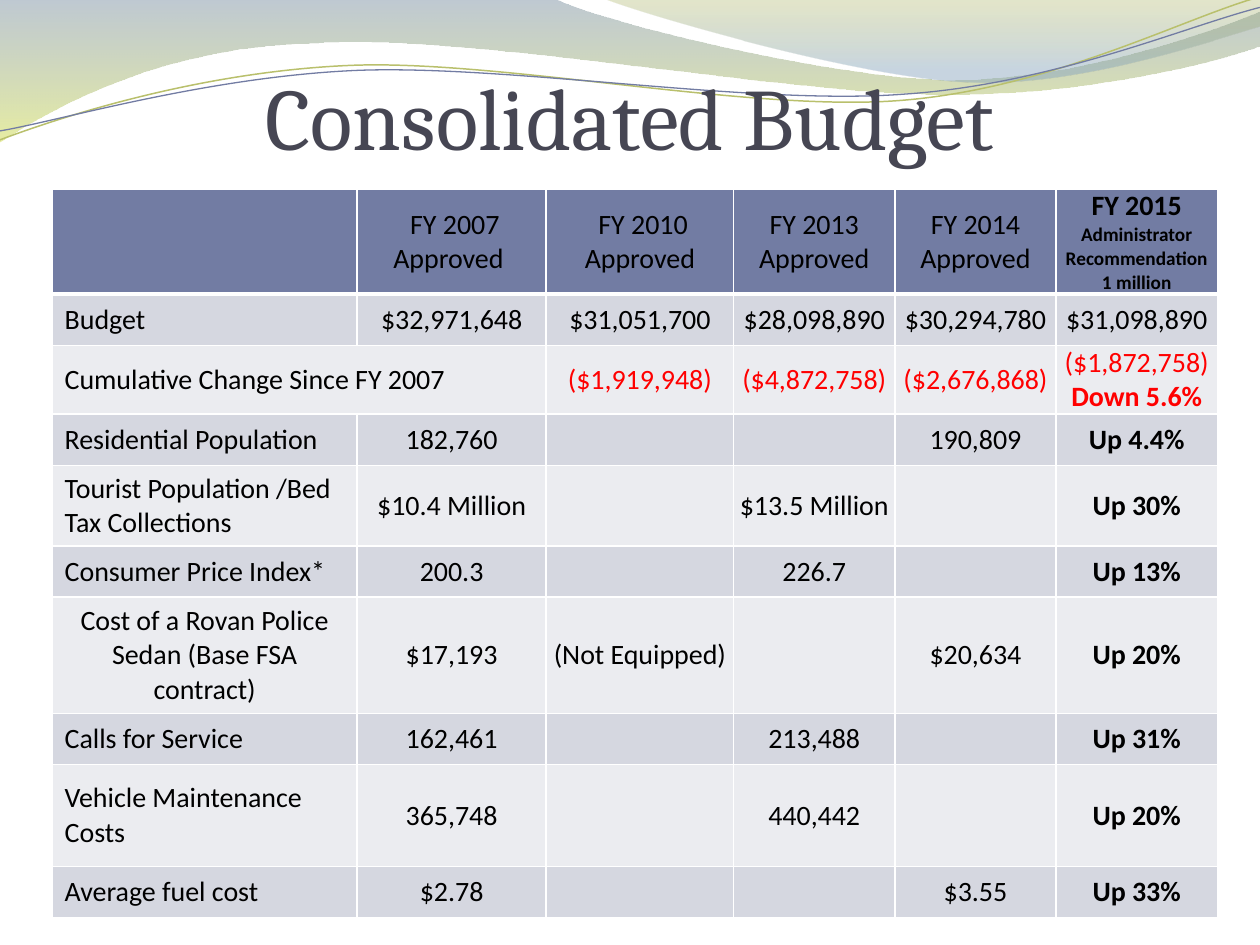
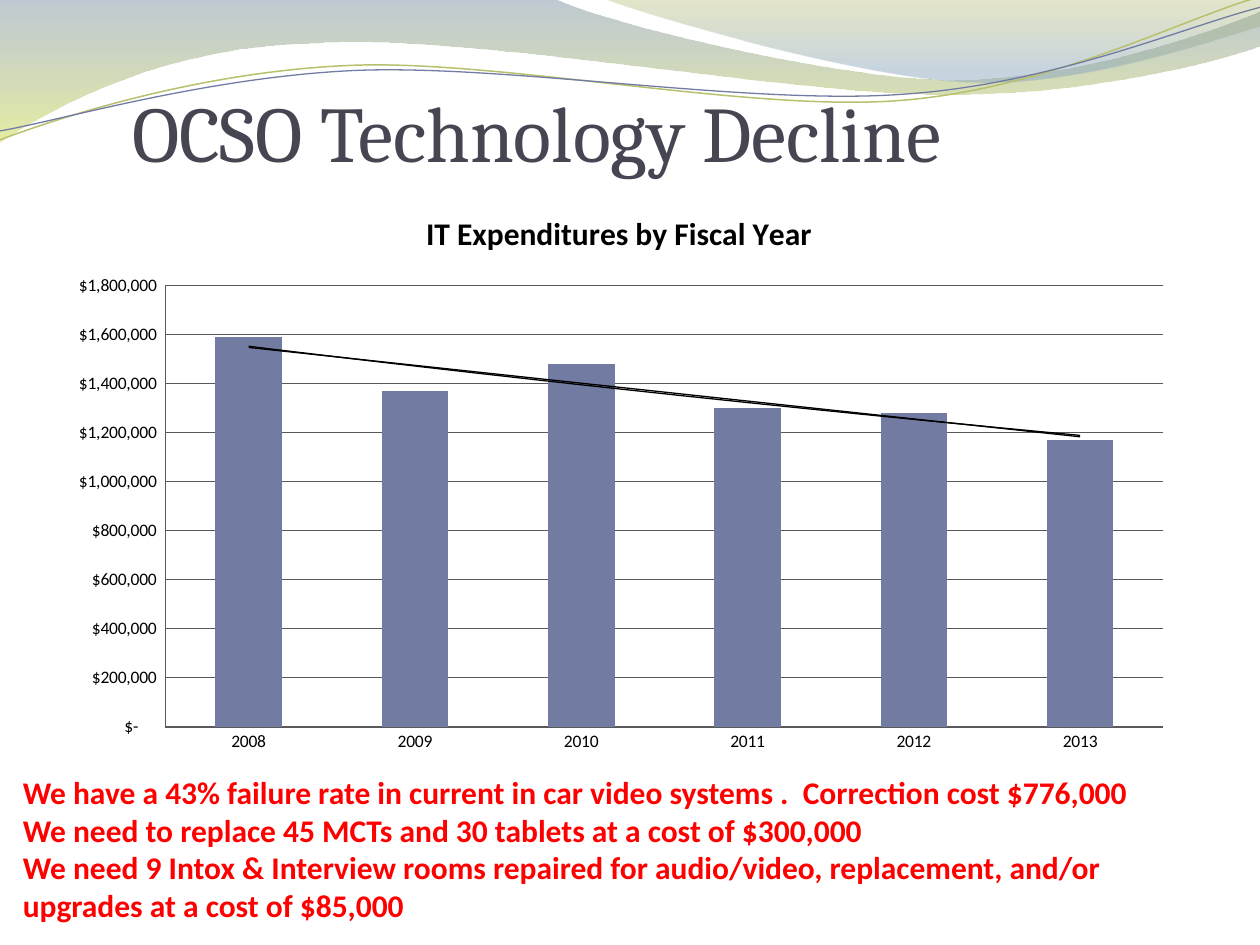
from lxml import etree
from pptx import Presentation
from pptx.chart.data import CategoryChartData
from pptx.dml.color import RGBColor
from pptx.enum.chart import XL_CHART_TYPE, XL_TICK_MARK
from pptx.enum.text import MSO_ANCHOR, PP_ALIGN
from pptx.oxml import parse_xml
from pptx.oxml.ns import nsdecls, qn
from pptx.util import Cm, Pt

SLATE, INK, BLACK, WHITE, RED = "727CA3", "464653", "000000", "FFFFFF", "FF0000"
BAND_DARK, BAND_LIGHT, GRID = "D5D7E0", "EBECF0", "595959"
HEADING_FONT, BODY_FONT = "Cambria", "Calibri"

WIDE_WAVE = [(0, 0), (11.18, -0.03),
             (12.09, 0.43, 16.87, 1.6, 19.25, 1.6),
             (21.67, 1.6, 24.33, 0.66, 25.4, 0.23), (25.43, 0.91),
             (24.97, 1.12, 22.1, 1.93, 18.95, 1.9),
             (15.8, 1.9, 9.7, 0.71, 6.53, 0.86),
             (3.28, 0.91, 1.17, 2.11, -0.03, 2.87)]
RIGHT_WAVE = [(12.17, -0.03),
              (12.93, 0.28, 17.32, 1.57, 19.53, 1.65),
              (21.74, 1.75, 24.41, 0.81, 25.4, 0.53), (25.4, 0)]
GREEN_CURVE = [(0, 2.82),
               (1.22, 2.36, 4.01, 1.45, 7.04, 1.32),
               (10.03, 1.19, 15.06, 2.26, 18.11, 2.03),
               (21.16, 1.8, 23.83, 0.38, 25.35, -0.05)]
SLATE_CURVE = [(0, 2.64),
               (1.19, 2.44, 4.17, 1.55, 7.19, 1.42),
               (10.24, 1.3, 15.16, 2.13, 18.21, 1.9),
               (21.23, 1.7, 23.9, 0.53, 25.4, 0.15)]

COLUMN_WIDTHS = [6.15, 3.81, 3.78, 3.25, 3.25, 3.25]
ROW_HEIGHTS = [2.12, 1.03, 1.39, 1.03, 1.63, 1.03, 2.34, 1.03, 2.06, 1.03]
BUDGET_ROWS = [
    ["", " FY 2007\nApproved ", " FY 2010\nApproved", "FY 2013\nApproved",
     "FY 2014\nApproved", "FY 2015\nAdministrator\nRecommendation\n1 million"],
    ["Budget", "$32,971,648", "$31,051,700", "$28,098,890", "$30,294,780", "$31,098,890"],
    ["Cumulative Change Since FY 2007", "", "($1,919,948)", "($4,872,758)",
     "($2,676,868)", "($1,872,758)\nDown 5.6%"],
    ["Residential Population", "182,760", "", "", "190,809", "Up 4.4%"],
    ["Tourist Population /Bed Tax Collections", "$10.4 Million", "",
     "$13.5 Million", "", "Up 30%"],
    ["Consumer Price Index*", "200.3", "", "226.7", "", "Up 13%"],
    ["Cost of a Rovan Police Sedan (Base FSA contract)", "$17,193",
     "(Not Equipped)", "", "$20,634", "Up 20%"],
    ["Calls for Service", "162,461", "", "213,488", "", "Up 31%"],
    ["Vehicle Maintenance Costs", "365,748", "", "440,442", "", "Up 20%"],
    ["Average fuel cost", "$2.78", "", "", "$3.55", "Up 33%"],
]
CHANGE_ROW, SEDAN_ROW = 2, 6

EXPENDITURES = {"2008": 1590000, "2009": 1370000, "2010": 1480000,
                "2011": 1300000, "2012": 1280000, "2013": 1170000}
DOLLAR_FORMAT = '_("$"* #,##0_);_("$"* \\(#,##0\\);_("$"* "-"??_);_(@_)'
NEEDS = [
    "We have a 43% failure rate in current in car video systems .  Correction cost $776,000",
    "We need to replace 45 MCTs and 30 tablets at a cost of $300,000",
    "We need 9 Intox & Interview rooms repaired for audio/video, replacement, "
    "and/or upgrades at a cost of $85,000",
]


def rgb(color):
    return RGBColor.from_string(color)


def style_font(font, size, color=BLACK, bold=False, name=BODY_FONT):
    font.size, font.bold, font.name = Pt(size), bold, name
    font.color.rgb = rgb(color)


def add_line(tf, text, align=PP_ALIGN.LEFT, **font_format):
    p = tf.paragraphs[0]
    if p.runs:
        p = tf.add_paragraph()
    p.alignment = align
    r = p.add_run()
    r.text = text
    style_font(r.font, **font_format)


def add_text_box(slide, box, margins, anchor):
    tf = slide.shapes.add_textbox(*map(Cm, box)).text_frame
    tf.word_wrap = True
    tf.vertical_anchor = anchor
    tf.margin_left, tf.margin_top, tf.margin_right, tf.margin_bottom = map(Cm, margins)
    return tf


def add_title(slide, box, text, size, align=PP_ALIGN.LEFT, indent=0):
    tf = add_text_box(slide, box, (indent, 0.13, 0, 0), MSO_ANCHOR.BOTTOM)
    add_line(tf, text, align, size=size, color=INK, name=HEADING_FONT)


def add_curve(slide, box, segments, close):
    points = [(Cm(box[0] + x), Cm(box[1] + y))
              for segment in segments for x, y in zip(segment[::2], segment[1::2])]
    builder = slide.shapes.build_freeform(*points[0], scale=1.0)
    builder.add_line_segments(points[1:], close=close)
    sp = builder.convert_to_shape()
    sp.shadow.inherit = False
    lines = iter(list(sp._element.iter(qn("a:lnTo"))))
    for segment in segments[1:]:
        line = next(lines)
        if len(segment) == 6:
            line.tag = qn("a:cubicBezTo")
            for _ in range(2):
                end = next(lines)
                line.append(end[0])
                end.getparent().remove(end)
    return sp


def add_waves(slide, box):
    for segments, stops in (
        (WIDE_WAVE, ((0, "72889B", 45), (1, "D3DE57", 55))),
        (RIGHT_WAVE, ((0, "A4AC50", 30), (0.8, "84A3BD", 45))),
    ):
        sp = add_curve(slide, box, segments, close=True)
        sp.line.fill.background()
        sp.fill.gradient()
        sp.fill.gradient_angle = 270
        for stop, (position, color, _) in zip(sp.fill.gradient_stops, stops):
            stop.position = position
            stop.color.rgb = rgb(color)
        for clr, (_, _, alpha) in zip(sp._element.spPr.iter(qn("a:srgbClr")), stops):
            etree.SubElement(clr, qn("a:alpha"), val=str(alpha * 1000))
    for segments, color, width in ((GREEN_CURVE, "B9C06C", 0.85), (SLATE_CURVE, SLATE, 0.75)):
        sp = add_curve(slide, box, segments, close=False)
        sp.fill.background()
        sp.line.color.rgb = rgb(color)
        sp.line.width = Pt(width)


def set_borders(cell, **widths):
    tc_pr = cell._tc.get_or_add_tcPr()
    for side in "LRTB":
        width = Pt(widths.get(side, 1))
        tc_pr.append(parse_xml(
            f'<a:ln{side} {nsdecls("a")} w="{width}"><a:solidFill>'
            f'<a:srgbClr val="{WHITE}"/></a:solidFill></a:ln{side}>'))


def fill_cell(cell, row, col, text):
    header, last = row == 0, col == len(COLUMN_WIDTHS) - 1
    set_borders(cell, B=3 if header else 1, T=3 if row == 1 else 1)
    cell.fill.solid()
    cell.fill.fore_color.rgb = rgb(SLATE if header else BAND_DARK if row % 2 else BAND_LIGHT)
    cell.vertical_anchor = MSO_ANCHOR.MIDDLE
    if col:
        cell.margin_left = cell.margin_right = cell.margin_top = cell.margin_bottom = 0
    centred = col or row == SEDAN_ROW
    for i, line in enumerate(text.split("\n") if text else []):
        add_line(cell.text_frame, line,
                 PP_ALIGN.CENTER if centred else PP_ALIGN.LEFT,
                 size=11 if header and last and i else 16,
                 color=RED if row == CHANGE_ROW and col else BLACK,
                 bold=(header and last) or line.startswith(("Up ", "Down ")))


def add_budget_table(slide, box):
    table = slide.shapes.add_table(len(ROW_HEIGHTS), len(COLUMN_WIDTHS), *map(Cm, box)).table
    table.first_row = table.horz_banding = False
    for column, width in zip(table.columns, COLUMN_WIDTHS):
        column.width = Cm(width)
    for row, height in zip(table.rows, ROW_HEIGHTS):
        row.height = Cm(height)
    for r, texts in enumerate(BUDGET_ROWS):
        for c, text in enumerate(texts):
            fill_cell(table.cell(r, c), r, c, text)
    table.cell(CHANGE_ROW, 0).merge(table.cell(CHANGE_ROW, 1))


def add_trend_line(series, kind):
    series._element.find(qn("c:cat")).addprevious(parse_xml(
        f'<c:trendline {nsdecls("c", "a")}><c:spPr><a:ln w="{Pt(0.75)}"><a:solidFill>'
        f'<a:srgbClr val="{BLACK}"/></a:solidFill></a:ln></c:spPr>'
        f'<c:trendlineType val="{kind}"/><c:dispRSqr val="0"/><c:dispEq val="0"/></c:trendline>'))


def set_plot_area(chart, **fractions):
    plot_area = chart._chartSpace.chart.plotArea
    for layout in plot_area.findall(qn("c:layout")):
        plot_area.remove(layout)
    values = "".join(f'<c:{k} val="{v}"/>' for k, v in fractions.items())
    plot_area.insert(0, parse_xml(
        f'<c:layout {nsdecls("c")}><c:manualLayout><c:layoutTarget val="inner"/>'
        f'<c:xMode val="edge"/><c:yMode val="edge"/>{values}</c:manualLayout></c:layout>'))


def add_expenditure_chart(slide, box):
    data = CategoryChartData(number_format=DOLLAR_FORMAT)
    data.categories = list(EXPENDITURES)
    data.add_series("Series 1", list(EXPENDITURES.values()))
    chart = slide.shapes.add_chart(XL_CHART_TYPE.COLUMN_CLUSTERED, *map(Cm, box), data).chart
    style_font(chart.font, 10)
    chart.has_legend = False
    chart.has_title = True
    add_line(chart.chart_title.text_frame, "IT Expenditures by Fiscal Year",
             PP_ALIGN.CENTER, size=18, bold=True)
    set_plot_area(chart, x=0.1, y=0.17, w=0.88, h=0.77)
    plot = chart.plots[0]
    plot.gap_width = 150
    plot.vary_by_categories = False
    series = plot.series[0]
    series.format.fill.solid()
    series.format.fill.fore_color.rgb = rgb(SLATE)
    for kind in ("exp", "linear"):
        add_trend_line(series, kind)
    values = chart.value_axis
    values.minimum_scale, values.maximum_scale, values.major_unit = 0, 1800000, 200000
    values.tick_labels.number_format = DOLLAR_FORMAT
    values.tick_labels.number_format_is_linked = False
    values.has_major_gridlines = True
    for axis in (values, chart.category_axis):
        axis.major_tick_mark = axis.minor_tick_mark = XL_TICK_MARK.NONE
    for ruled in (values, values.major_gridlines, chart.category_axis):
        ruled.format.line.color.rgb = rgb(GRID)
        ruled.format.line.width = Pt(0.75)


def add_needs(slide, box):
    tf = add_text_box(slide, box, (0.25, 0.13, 0.25, 0.13), MSO_ANCHOR.TOP)
    for need in NEEDS:
        add_line(tf, need, size=18, color=RED, bold=True)


def new_slide(prs):
    slide = prs.slides.add_slide(prs.slide_layouts[6])
    add_waves(slide, (0, 0))
    return slide


def budget_slide(prs):
    slide = new_slide(prs)
    add_title(slide, (1.27, 0.42, 22.86, 2.97), "Consolidated Budget", 50, PP_ALIGN.CENTER)
    add_budget_table(slide, (1.05, 3.81, sum(COLUMN_WIDTHS), sum(ROW_HEIGHTS)))


def technology_slide(prs):
    slide = new_slide(prs)
    add_title(slide, (1.27, 1.95, 22.86, 1.65), "OCSO Technology Decline", 45, indent=1.4)
    add_expenditure_chart(slide, (1.05, 3.79, 22.86, 11.56))
    add_needs(slide, (0.21, 15.45, 24.77, 3.33))


def main():
    prs = Presentation()
    prs.slide_width, prs.slide_height = Cm(25.4), Cm(19.05)
    budget_slide(prs)
    technology_slide(prs)
    prs.save("out.pptx")


if __name__ == "__main__":
    main()
